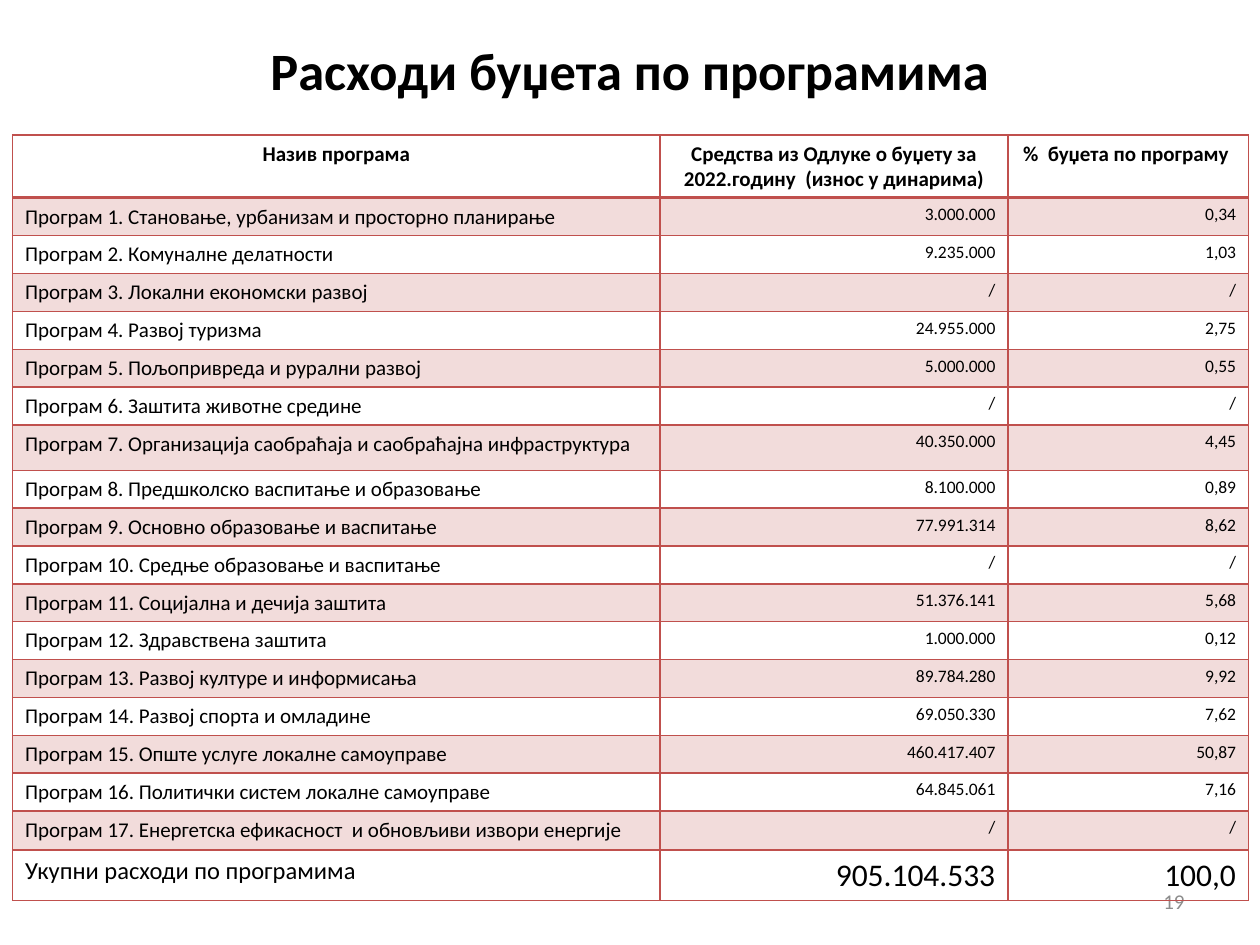
from dataclasses import dataclass

import pptx
import pptx.dml.color
import pptx.enum.text
import pptx.oxml
import pptx.oxml.ns
import pptx.util

Inches = pptx.util.Inches
ALIGN = pptx.enum.text.PP_ALIGN
MIDDLE = pptx.enum.text.MSO_ANCHOR.MIDDLE


@dataclass(frozen=True)
class Theme:
    font: str = "Calibri"
    text: str = "000000"
    muted: str = "8C8C8C"
    accent: str = "C0504D"
    band_alpha: int = 20
    title: int = 30
    body: int = 12
    figure: int = 10
    total_name: int = 14
    total_figure: int = 18
    line: int = 1
    header_line: int = 2


@dataclass(frozen=True)
class Program:
    name: str
    amount: str = "/"
    share: str = "/"
    height: float = 0.3


THEME = Theme()
COLUMNS = (5.14, 2.76, 1.91)
HEADER = Program(
    "Назив програма",
    "Средства из Одлуке о буџету за 2022.годину  (износ у динарима)",
    "%  буџета по програму ",
    0.5,
)
PROGRAMS = (
    Program("Становање, урбанизам и просторно планирање", "3.000.000", "0,34"),
    Program("Комуналне делатности", "9.235.000", "1,03"),
    Program("Локални економски развој"),
    Program("Развој туризма", "24.955.000", "2,75"),
    Program("Пољопривреда и рурални развој", "5.000.000", "0,55"),
    Program("Заштита животне средине"),
    Program("Организација саобраћаја и саобраћајна инфраструктура", "40.350.000", "4,45", 0.36),
    Program("Предшколско васпитање и образовање", "8.100.000", "0,89"),
    Program("Основно образовање и васпитање", "77.991.314", "8,62"),
    Program("Средње образовање и васпитање"),
    Program("Социјална и дечија заштита", "51.376.141", "5,68"),
    Program("Здравствена заштита", "1.000.000", "0,12"),
    Program("Развој културе и информисања", "89.784.280", "9,92"),
    Program("Развој спорта и омладине", "69.050.330", "7,62"),
    Program("Опште услуге локалне самоуправе", "460.417.407", "50,87"),
    Program("Политички систем локалне самоуправе", "64.845.061", "7,16"),
    Program("Енергетска ефикасност  и обновљиви извори енергије", height=0.31),
)
TOTAL = Program("Укупни расходи по програмима", "905.104.533", "100,0", 0.4)


def write(tf, text: str, *, size: int = THEME.body, bold: bool = False,
          color: str = THEME.text, align=ALIGN.LEFT) -> None:
    """Put one formatted run in a text frame."""
    tf.word_wrap = True
    p = tf.paragraphs[0]
    p.alignment = align
    r = p.add_run()
    r.text = text
    r.font.name = THEME.font
    r.font.size = pptx.util.Pt(size)
    r.font.bold = bold
    r.font.color.rgb = pptx.dml.color.RGBColor.from_string(color)


def style_cell(cell, *, top: int, bottom: int, banded: bool) -> None:
    """Draw the borders of a cell and its translucent band."""
    pr = cell._tc.get_or_add_tcPr()
    for side, width in (("L", THEME.line), ("R", THEME.line), ("T", top), ("B", bottom)):
        pr.append(pptx.oxml.parse_xml(
            f'<a:ln{side} {pptx.oxml.ns.nsdecls("a")} w="{pptx.util.Pt(width)}">'
            f'<a:solidFill><a:srgbClr val="{THEME.accent}"/></a:solidFill></a:ln{side}>'))
    if not banded:
        cell.fill.background()
        return
    cell.fill.solid()
    cell.fill.fore_color.rgb = pptx.dml.color.RGBColor.from_string(THEME.accent)
    pr.find("a:solidFill/a:srgbClr", pr.nsmap).append(pptx.oxml.parse_xml(
        f'<a:alpha {pptx.oxml.ns.nsdecls("a")} val="{THEME.band_alpha * 1000}"/>'))


def fill_row(table, i: int, row: Program, *, name_size: int = THEME.body,
             figure_size: int = THEME.figure, header: bool = False,
             banded: bool = False) -> None:
    """Write and style one row of the budget table."""
    table.rows[i].height = Inches(row.height)
    for j, text in enumerate((row.name, row.amount, row.share)):
        cell = table.cell(i, j)
        align = ALIGN.CENTER if header else ALIGN.RIGHT if j else ALIGN.LEFT
        write(cell.text_frame, text, size=figure_size if j else name_size,
              bold=header, align=align)
        style_cell(cell, top=THEME.header_line if i == 1 else THEME.line,
                   bottom=THEME.header_line if header else THEME.line, banded=banded)


def add_budget_table(s) -> None:
    """Add the table of spending by programme."""
    rows = (HEADER, *PROGRAMS, TOTAL)
    table = s.shapes.add_table(
        len(rows), len(COLUMNS), Inches(0.1), Inches(1.07),
        Inches(sum(COLUMNS)), Inches(sum(row.height for row in rows))).table
    table.first_row = table.horz_banding = False
    for column, width in zip(table.columns, COLUMNS):
        column.width = Inches(width)
    fill_row(table, 0, HEADER, figure_size=THEME.body, header=True)
    for i, program in enumerate(PROGRAMS, 1):
        row = Program(f"Програм {i}. {program.name}", program.amount,
                      program.share, program.height)
        fill_row(table, i, row, banded=i % 2 == 1)
    fill_row(table, len(rows) - 1, TOTAL, name_size=THEME.total_name,
             figure_size=THEME.total_figure)


def main() -> None:
    """Build and save the slide."""
    prs = pptx.Presentation()
    prs.slide_width, prs.slide_height = Inches(10), Inches(7.5)
    s = prs.slides.add_slide(prs.slide_layouts[5])
    title = s.shapes.title
    title.left, title.top = Inches(0.74), Inches(0.13)
    title.width, title.height = Inches(8.52), Inches(0.85)
    title.text_frame.vertical_anchor = MIDDLE
    write(title.text_frame, "Расходи буџета по програмима", size=THEME.title,
          bold=True, align=ALIGN.CENTER)
    sp = s.shapes.add_textbox(Inches(7.17), Inches(6.95), Inches(2.33), Inches(0.4))
    sp.text_frame.vertical_anchor = MIDDLE
    write(sp.text_frame, "19", color=THEME.muted, align=ALIGN.RIGHT)
    add_budget_table(s)
    prs.save("out.pptx")


if __name__ == "__main__":
    main()
